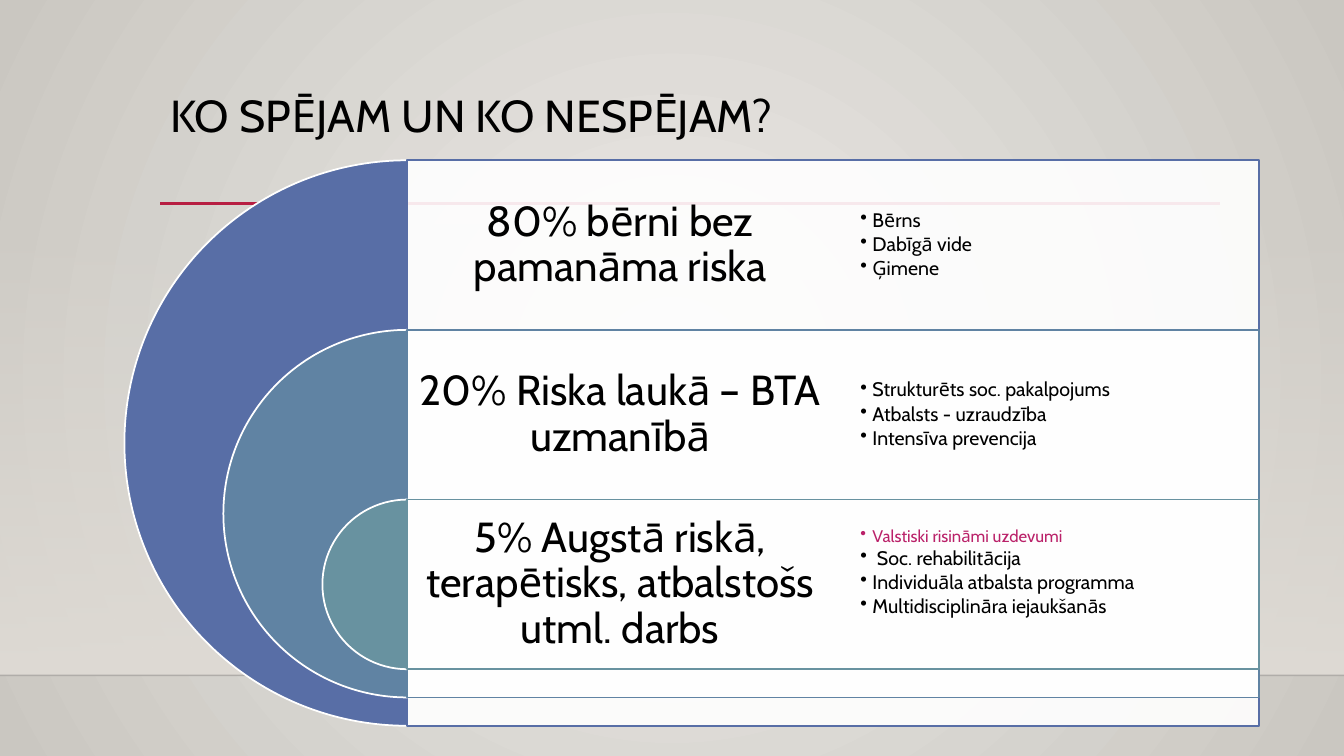
from pptx import Presentation
from pptx.dml.color import RGBColor
from pptx.enum.shapes import MSO_CONNECTOR as Conn, MSO_SHAPE as Kind
from pptx.enum.text import MSO_ANCHOR as Anchor, PP_ALIGN as Align
from pptx.oxml import parse_xml
from pptx.oxml.ns import nsdecls, qn
from pptx.oxml.xmlchemy import OxmlElement as Node
from pptx.util import Inches, Pt

INK, ROSE, RED, WHITE, SAND = "000000", "BA2169", "B71E42", "FFFFFF", "DFDBD5"


def tint(hue):
    return RGBColor.from_string(hue)


def fade(elm, share):
    """Set the opacity, in percent, of the first colour inside an element."""
    alpha = Node("a:alpha")
    alpha.set("val", str(share * 1000))
    next(elm.iter(qn("a:srgbClr"))).append(alpha)


def blend(elm, stops, course):
    """Swap the first solid fill for a gradient of (place, hue, opacity)."""
    marks = "".join(
        f'<a:gs pos="{place * 1000}"><a:srgbClr val="{hue}">'
        f'<a:alpha val="{share * 1000}"/></a:srgbClr></a:gs>'
        for place, hue, share in stops)
    solid = next(elm.iter(qn("a:solidFill")))
    solid.getparent().replace(solid, parse_xml(
        f'<a:gradFill {nsdecls("a")} rotWithShape="1">'
        f'<a:gsLst>{marks}</a:gsLst>{course}</a:gradFill>'))


class Page:
    """One slide; places and sizes are percent of its width and height."""
    font = "Cabin"

    def __init__(self, deck):
        self.wide, self.high = deck.slide_width, deck.slide_height
        self.slide = deck.slides.add_slide(deck.slide_layouts[6])
        self.shapes = self.slide.shapes

    def area(self, x, y, w, h):
        return [round(v * side / 100) for v, side in
                zip((x, y, w, h), (self.wide, self.high) * 2)]

    def ground(self, inner, outer):
        self.slide.background.fill.solid()
        self.slide.background.fill.fore_color.rgb = tint(inner)
        blend(self.slide._element, [(0, inner, 100), (100, outer, 100)],
              '<a:path path="circle"><a:fillToRect l="50000" t="50000" '
              'r="50000" b="50000"/></a:path>')

    def shape(self, kind, box, hue, edge=None, share=100):
        item = self.shapes.add_shape(kind, *self.area(*box))
        item.shadow.inherit = False
        item.fill.solid()
        item.fill.fore_color.rgb = tint(hue)
        if share < 100:
            fade(item._element, share)
        if edge:
            item.line.color.rgb = tint(edge)
            item.line.width = Pt(1.25)
        else:
            item.line.fill.background()
        return item

    def rule(self, x, end, y, hue, width, share=100):
        left, top, right, foot = self.area(x, y, end, y)
        item = self.shapes.add_connector(Conn.STRAIGHT, left, top, right, foot)
        item.line.color.rgb = tint(hue)
        item.line.width = Pt(width)
        if share < 100:
            fade(item._element, share)
        item._element.spPr.append(Node("a:effectLst"))

    def text(self, box, rows, pad, align=Align.LEFT, anchor=Anchor.MIDDLE,
             after=0, dots=False):
        """Write rows of (words, size, hue); pad is left, top, right, bottom."""
        frame = self.shapes.add_textbox(*self.area(*box)).text_frame
        frame.word_wrap = True
        frame.vertical_anchor = anchor
        (frame.margin_left, frame.margin_top,
         frame.margin_right, frame.margin_bottom) = map(Inches, pad)
        for i, (words, size, hue) in enumerate(rows):
            para = frame.add_paragraph() if i else frame.paragraphs[0]
            para.alignment = align
            para.line_spacing = 0.9
            para.space_after = Pt(after)
            if dots:
                self.dot(para)
            run = para.add_run()
            run.text = words
            run.font.name = self.font
            run.font.size = Pt(size)
            run.font.color.rgb = tint(hue)

    def dot(self, para):
        props = para._p.get_or_add_pPr()
        props.set("marL", str(Inches(0.12)))
        props.set("indent", str(Inches(-0.12)))
        mark = Node("a:buChar")
        mark.set("char", "•")
        props.append(mark)


LEVELS = [
    ("586EA6", "80% bērni bez pamanāma riska",
     ["Bērns", "Dabīgā vide", "Ģimene"]),
    ("6083A3", "20% Riska laukā – BTA uzmanībā",
     ["Strukturēts soc. pakalpojums", "Atbalsts - uzraudzība",
      "Intensīva prevencija"]),
    ("6892A0", "5% Augstā riskā, terapētisks, atbalstošs utml. darbs",
     ["Valstiski risināmi uzdevumi", " Soc. rehabilitācija",
      "Individuāla atbalsta programma", "Multidisciplināra iejaukšanās"]),
]
LEFT, TOP, HALF, FULL = 30.3, 21.2, 31.69, 74.8
ROW = FULL * 0.3


def main():
    deck = Presentation()
    deck.slide_width, deck.slide_height = Inches(13.33), Inches(7.5)
    page = Page(deck)
    page.ground("ECEAE7", "CAC7C1")
    glow = page.shape(Kind.RECTANGLE, (0, 29.47, 100, 59.87), SAND)
    blend(glow._element, [(0, SAND, 0), (100, SAND, 100)],
          '<a:lin ang="5400000" scaled="0"/>')
    page.rule(0, 100, 89.33, "000001", 1, 20)
    page.rule(11.93, 90.75, 26.93, RED, 2.5)
    page.text((11.93, 11.73, 78.75, 15.33),
              [("KO SPĒJAM UN KO NESPĒJAM?", 32, INK)],
              (0.1, 0.05, 0.1, 0.05), anchor=Anchor.TOP)

    for i, (hue, label, notes) in enumerate(LEVELS):
        y, size = TOP + i * ROW, FULL * (1 - 0.35 * i)
        span = size * page.high / page.wide
        ring = page.shape(Kind.PIE, (LEFT - span / 2, y, span, size),
                          hue, WHITE)
        ring.adjustments[0], ring.adjustments[1] = 54, 162
        page.shape(Kind.RECTANGLE, (LEFT, y, HALF * 2, size), WHITE, hue, 90)
        page.text((LEFT, y, HALF, ROW), [(label, 30, INK)], [0.12] * 4,
                  Align.CENTER, after=10.5)
        last = i == len(LEVELS) - 1
        rows = [(note, 12, ROSE) if last and not n else (note, 14, INK)
                for n, note in enumerate(notes)]
        page.text((LEFT + HALF, y, HALF, ROW), rows,
                  (0.27, 0.27, 0.27, 0.5 if last else 0.27),
                  after=2.1, dots=True)
    deck.save("out.pptx")


if __name__ == "__main__":
    main()
